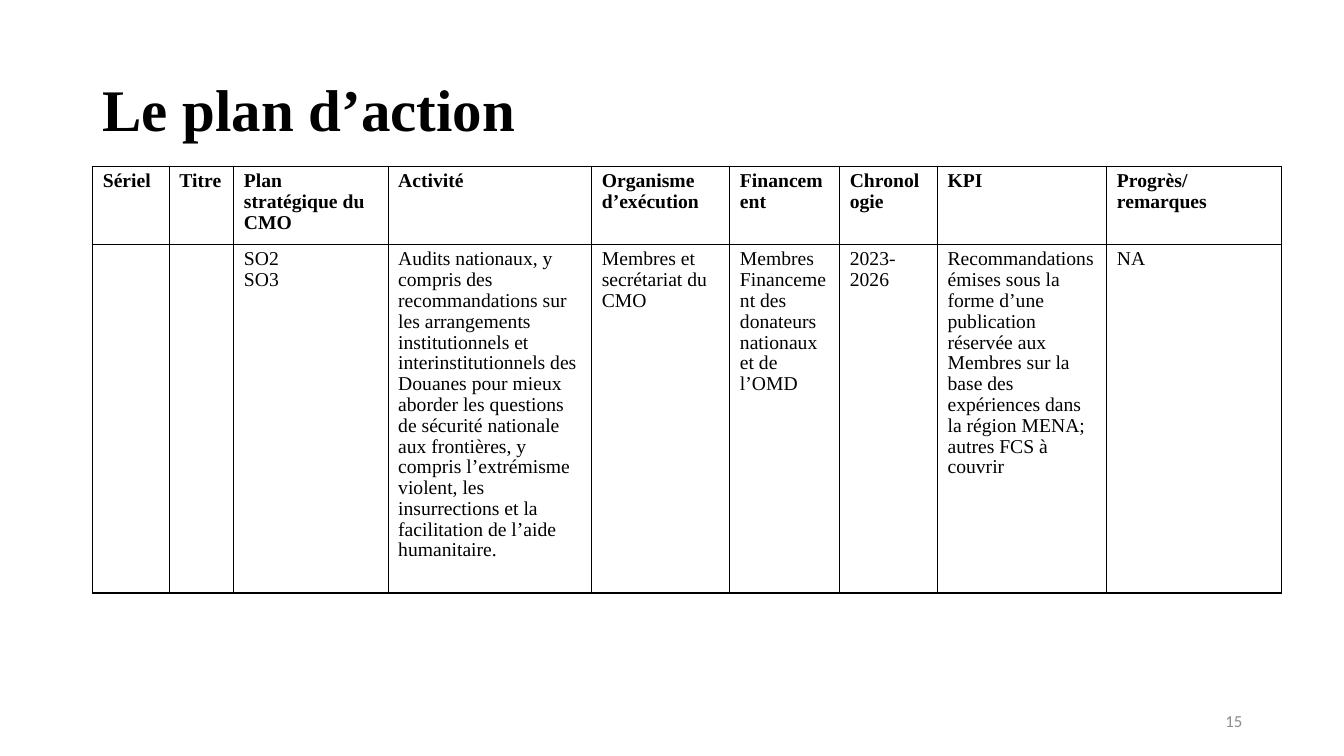
from lxml import etree
from pptx import Presentation
from pptx import util as u
from pptx.dml.color import RGBColor
from pptx.enum import text
from pptx.oxml.ns import qn

BLACK = RGBColor(0x00, 0x00, 0x00)
GREY = RGBColor(0x8C, 0x8C, 0x8C)

COL_WIDTHS = [0.76, 0.64, 1.53, 2.02, 1.37, 1.09, 0.97, 1.68, 1.73]
ROW_HEIGHTS = [0.75, 3.32]
HEADERS = ["Sériel", "Titre", "Plan stratégique du CMO", "Activité",
           "Organisme d’exécution", "Financement", "Chronologie", "KPI",
           "Progrès/remarques"]
ACTION = [
    "", "", "SO2\nSO3",
    "Audits nationaux, y compris des recommandations sur les arrangements "
    "institutionnels et interinstitutionnels des Douanes pour mieux aborder "
    "les questions de sécurité nationale aux frontières, y compris "
    "l’extrémisme violent, les insurrections et la facilitation de l’aide "
    "humanitaire.",
    "Membres et secrétariat du CMO",
    "Membres\nFinancement des donateurs nationaux et de l’OMD",
    "2023-2026",
    "Recommandations émises sous la forme d’une publication réservée aux "
    "Membres sur la base des expériences dans la région MENA; autres FCS à "
    "couvrir",
    "NA",
]


class SlideBuilder:
    """Holds the style and the current slide."""
    serif = "Times New Roman"
    sans = "Calibri"

    def __init__(self, prs):
        self.s = prs.slides.add_slide(prs.slide_layouts[6])

    def style(self, p, size, name, color, bold=False, spacing=1.0,
              align=text.PP_ALIGN.LEFT):
        p.font.size = u.Pt(size)
        p.font.name = name
        p.font.color.rgb = color
        p.font.bold = bold
        p.line_spacing = spacing
        p.alignment = align

    def textbox(self, box, words, size, name, color, **kw):
        tf = self.s.shapes.add_textbox(*map(u.Inches, box)).text_frame
        tf.word_wrap = True
        tf.vertical_anchor = text.MSO_ANCHOR.MIDDLE
        tf.text = words
        self.style(tf.paragraphs[0], size, name, color, **kw)

    def borders(self, cell, width=1):
        tc_pr = cell._tc.get_or_add_tcPr()
        for side in ("lnL", "lnR", "lnT", "lnB"):
            ln = etree.SubElement(tc_pr, qn(f"a:{side}"), w=str(u.Pt(width)))
            fill = etree.SubElement(ln, qn("a:solidFill"))
            etree.SubElement(fill, qn("a:srgbClr"), val=str(BLACK))

    def table(self, left, top, widths, heights, rows):
        box = (left, top, sum(widths), sum(heights))
        table = self.s.shapes.add_table(len(rows), len(widths),
                                        *map(u.Inches, box)).table
        table.first_row = table.horz_banding = False
        for col, width in zip(table.columns, widths):
            col.width = u.Inches(width)
        for i, (row, height) in enumerate(zip(table.rows, heights)):
            row.height = u.Inches(height)
            for cell, words in zip(row.cells, rows[i]):
                cell.text = words
                self.borders(cell)
                cell.fill.background()
                for p in cell.text_frame.paragraphs:
                    self.style(p, 14, self.serif, BLACK, bold=i == 0,
                               spacing=0.96)


def main():
    prs = Presentation()
    prs.slide_width, prs.slide_height = u.Inches(13.33), u.Inches(7.5)
    b = SlideBuilder(prs)

    # Title
    b.textbox((0.92, 0.59, 11.5, 1.05), "Le plan d’action", 42.1, b.serif,
              BLACK, bold=True, spacing=0.9)

    # Action plan
    b.table(0.92, 1.65, COL_WIDTHS, ROW_HEIGHTS, [HEADERS, ACTION])

    # Page number
    b.textbox((9.42, 6.95, 3, 0.4), "15", 12, b.sans, GREY,
              align=text.PP_ALIGN.RIGHT)

    prs.save("out.pptx")


if __name__ == "__main__":
    main()
